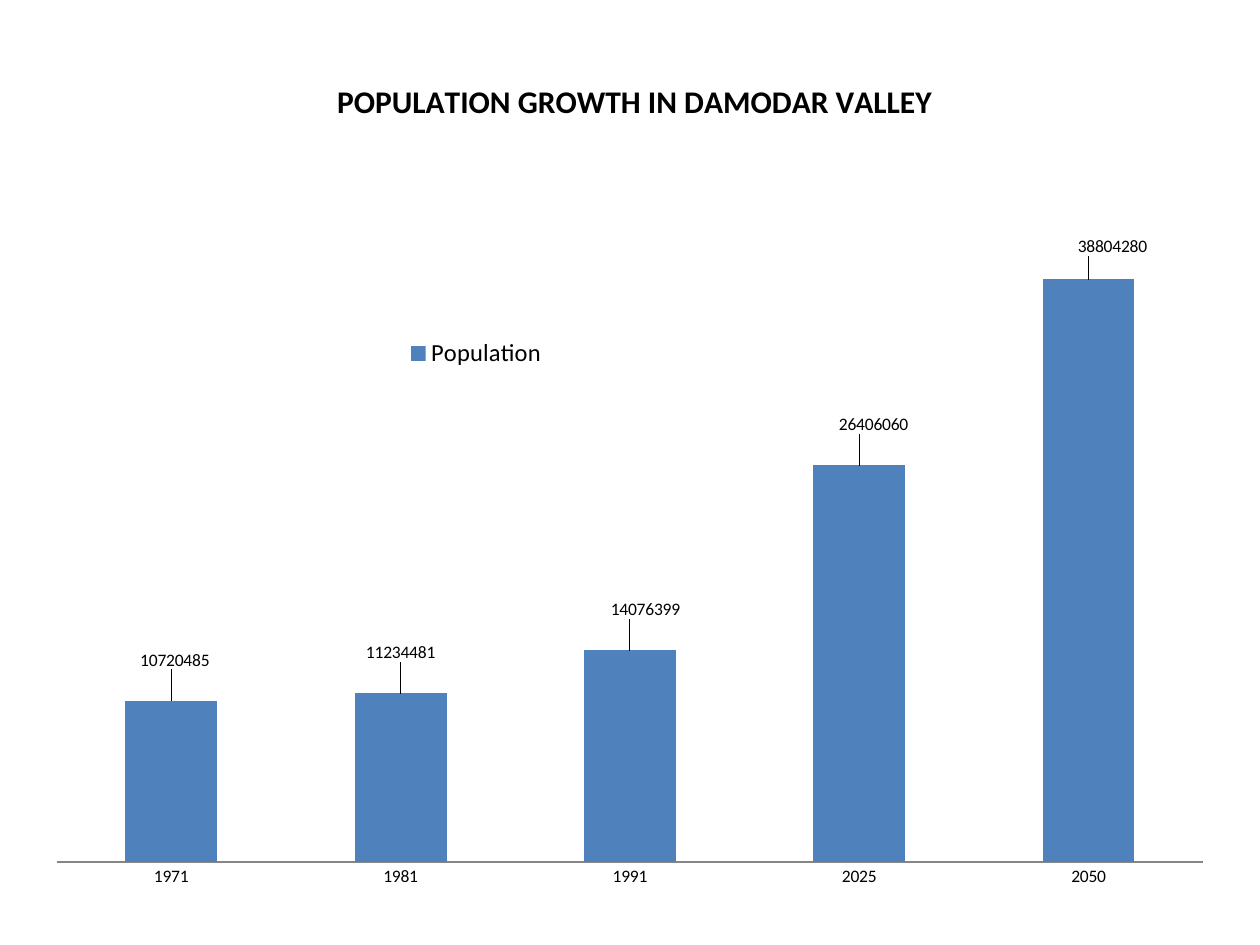
"""Build a slide with a column chart of population growth in Damodar Valley."""
from dataclasses import dataclass
from typing import Optional

from lxml.etree import SubElement
from pptx import Presentation
from pptx.chart.chart import Chart
from pptx.chart.data import CategoryChartData
from pptx.dml.color import RGBColor
from pptx.enum.chart import XL_CHART_TYPE as ChartType
from pptx.enum.chart import XL_LABEL_POSITION as LabelPosition
from pptx.enum.chart import XL_LEGEND_POSITION as LegendPosition
from pptx.enum.chart import XL_TICK_LABEL_POSITION as TickLabelPosition
from pptx.enum.chart import XL_TICK_MARK as TickMark
from pptx.oxml.ns import qn
from pptx.util import Inches, Pt

COLORS = {"text": "000000", "bar": "4F81BD", "axis": "868686"}
FONT = "Calibri"
SLIDE_WIDTH, SLIDE_HEIGHT = Inches(10), Inches(7.5)
MARGIN_X, MARGIN_TOP, CHART_HEIGHT = 0.026, 0.041, 0.917


@dataclass(frozen=True)
class Bar:
    year: str
    population: int
    label_dx: float
    label_dy: float


@dataclass(frozen=True)
class Layout:
    x: float
    y: float
    w: Optional[float] = None
    h: Optional[float] = None
    inner: bool = False
    edge: bool = True


BARS = [
    Bar("1971", 10720485, 0.003, -0.03),
    Bar("1981", 11234481, 0, -0.03),
    Bar("1991", 14076399, 0.013, -0.03),
    Bar("2025", 26406060, 0.012, -0.03),
    Bar("2050", 38804280, 0.02, -0.02),
]


def style_font(font, size: float, bold: bool = False) -> None:
    """Give a font the slide's typeface and text colour."""
    font.name, font.size, font.bold = FONT, Pt(size), bold
    font.color.rgb = RGBColor.from_string(COLORS["text"])


def place(parent, index: int, layout: Layout) -> None:
    """Set a manual layout on a chart part, in shares of the chart."""
    for old in parent.findall(qn("c:layout")):
        parent.remove(old)
    element = parent.makeelement(qn("c:layout"))
    parent.insert(index, element)
    manual = SubElement(element, qn("c:manualLayout"))
    settings = {
        "layoutTarget": "inner" if layout.inner else None,
        "xMode": "edge" if layout.edge else None,
        "yMode": "edge" if layout.edge else None,
        "x": layout.x,
        "y": layout.y,
        "w": layout.w,
        "h": layout.h,
    }
    for name, value in settings.items():
        if value is not None:
            SubElement(manual, qn(f"c:{name}")).set("val", str(value))


def style_title_and_legend(chart: Chart) -> None:
    """Write the title and put the legend inside the plot."""
    chart.has_title = True
    title_frame = chart.chart_title.text_frame
    title_frame.text = "POPULATION GROWTH IN DAMODAR VALLEY"
    style_font(title_frame.paragraphs[0].runs[0].font, 18, bold=True)
    chart.has_legend = True
    chart.legend.position = LegendPosition.TOP
    chart.legend.include_in_layout = False
    style_font(chart.legend.font, 14)
    parts = chart.element.find(qn("c:chart"))
    place(parts.find(qn("c:title")), 1, Layout(0.25, 0.04))
    place(parts.find(qn("c:legend")), 1, Layout(0.31, 0.34))
    place(parts.find(qn("c:plotArea")), 0, Layout(0.02, 0.17, 0.96, 0.78, inner=True))


def style_axes(chart: Chart) -> None:
    """Show only the year axis."""
    years, values = chart.category_axis, chart.value_axis
    years.major_tick_mark = TickMark.NONE
    years.tick_label_position = TickLabelPosition.NEXT_TO_AXIS
    years.format.line.color.rgb = RGBColor.from_string(COLORS["axis"])
    style_font(years.tick_labels.font, 10)
    values.visible = values.has_major_gridlines = False
    values.minimum_scale, values.maximum_scale = 0, 45_000_000


def style_bars(chart: Chart) -> None:
    """Colour the bars and shift their value labels."""
    plot = chart.plots[0]
    plot.gap_width, plot.vary_by_categories = 150, False
    series = plot.series[0]
    series.format.fill.solid()
    series.format.fill.fore_color.rgb = RGBColor.from_string(COLORS["bar"])
    labels = series.data_labels
    labels.show_value, labels.position = True, LabelPosition.OUTSIDE_END
    style_font(labels.font, 10)
    for index, bar in enumerate(BARS):
        label = series.points[index].data_label
        label.position = LabelPosition.OUTSIDE_END
        style_font(label.font, 10)
    for element, bar in zip(series.data_labels._element.findall(qn("c:dLbl")), BARS):
        place(element, 1, Layout(bar.label_dx, bar.label_dy, edge=False))


def main() -> None:
    """Create and save the presentation."""
    presentation = Presentation()
    presentation.slide_width, presentation.slide_height = SLIDE_WIDTH, SLIDE_HEIGHT
    slide = presentation.slides.add_slide(presentation.slide_layouts[6])
    data = CategoryChartData()
    data.categories = [bar.year for bar in BARS]
    data.add_series("Population", [bar.population for bar in BARS])
    chart = slide.shapes.add_chart(
        ChartType.COLUMN_CLUSTERED,
        int(SLIDE_WIDTH * MARGIN_X),
        int(SLIDE_HEIGHT * MARGIN_TOP),
        int(SLIDE_WIDTH * (1 - 2 * MARGIN_X)),
        int(SLIDE_HEIGHT * CHART_HEIGHT),
        data,
    ).chart
    style_font(chart.font, 10)
    style_title_and_legend(chart)
    style_axes(chart)
    style_bars(chart)
    presentation.save("out.pptx")


if __name__ == "__main__":
    main()
